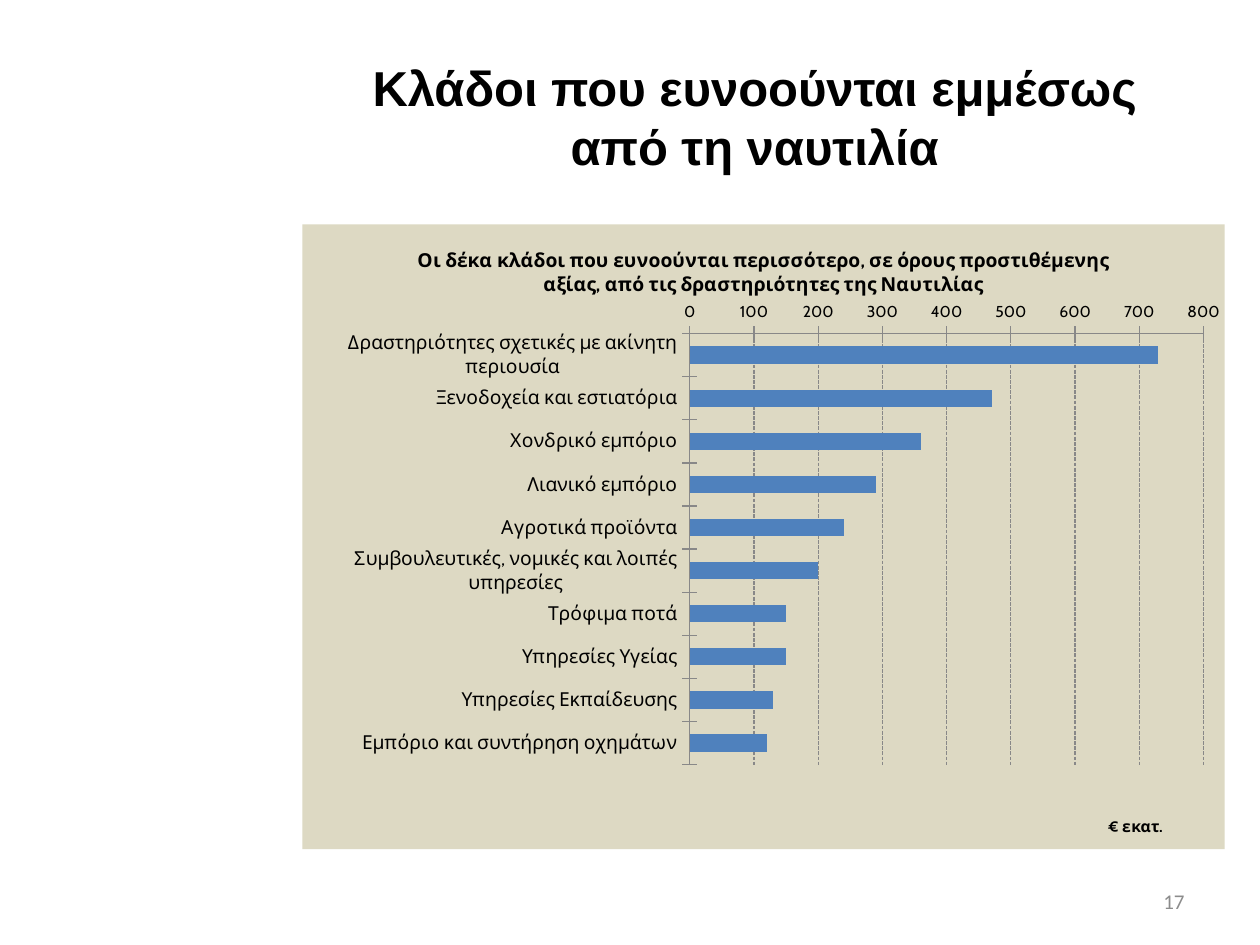
from dataclasses import dataclass

from lxml import etree
from pptx import Presentation
from pptx.chart.data import CategoryChartData
from pptx.dml.color import RGBColor
from pptx.enum.chart import XL_AXIS_CROSSES, XL_CHART_TYPE, XL_TICK_MARK
from pptx.enum.dml import MSO_LINE
from pptx.enum.text import MSO_ANCHOR, PP_ALIGN
from pptx.oxml.ns import qn
from pptx.util import Inches, Pt

BAR = XL_CHART_TYPE.BAR_CLUSTERED
CROSS = XL_TICK_MARK.CROSS
FAR = XL_AXIS_CROSSES.MAXIMUM
DASH = MSO_LINE.SQUARE_DOT
MIDDLE = MSO_ANCHOR.MIDDLE
CENTER, RIGHT = PP_ALIGN.CENTER, PP_ALIGN.RIGHT


@dataclass(frozen=True)
class Theme:
    ink: str = "000000"
    paper: str = "FFFFFF"
    sand: str = "DDD9C3"
    blue: str = "4F81BD"
    line: str = "888888"
    pale: str = "8C8C8C"
    head: int = 28
    note: int = 12
    label: int = 11
    small: int = 9
    head_font: str = "Arial"
    note_font: str = "Calibri"
    chart_font: str = "Cabin"


SECTORS = {
    "Δραστηριότητες σχετικές με ακίνητη περιουσία": 730,
    "Ξενοδοχεία και εστιατόρια": 470,
    "Χονδρικό εμπόριο": 360,
    "Λιανικό εμπόριο": 290,
    "Αγροτικά προϊόντα": 240,
    "Συμβουλευτικές, νομικές και λοιπές υπηρεσίες": 200,
    "Τρόφιμα ποτά": 150,
    "Υπηρεσίες Υγείας": 150,
    "Υπηρεσίες Εκπαίδευσης": 130,
    "Εμπόριο και συντήρηση οχημάτων": 120,
}


def paint(fill, color):
    fill.solid()
    fill.fore_color.rgb = RGBColor.from_string(color)


def layout(host, index, **parts):
    """Give a chart part a manual layout, in fractions of the chart."""
    for old in host.findall(qn("c:layout")):
        host.remove(old)
    node = etree.Element(qn("c:layout"))
    host.insert(index, node)
    manual = etree.SubElement(node, qn("c:manualLayout"))
    for name, value in parts.items():
        etree.SubElement(manual, qn(f"c:{name}")).set("val", str(value))


class Deck:
    def __init__(self, theme):
        self.theme = theme
        self.prs = Presentation()
        self.prs.slide_width, self.prs.slide_height = Inches(10), Inches(7.5)
        self.slide = self.prs.slides.add_slide(self.prs.slide_layouts[6])

    def style(self, font, size, name, color, bold=False):
        font.size, font.name, font.bold = Pt(size), name, bold
        font.color.rgb = RGBColor.from_string(color)

    def text(self, box, words, align, size, name, color, bold=False):
        shape = self.slide.shapes.add_textbox(*map(Inches, box))
        frame = shape.text_frame
        frame.word_wrap, frame.vertical_anchor = True, MIDDLE
        para = frame.paragraphs[0]
        para.alignment = align
        run = para.add_run()
        run.text = words
        self.style(run.font, size, name, color, bold)
        return shape

    def caption(self, frame, words, size):
        run = frame.paragraphs[0].add_run()
        run.text = words
        self.style(run.font, size, self.theme.chart_font, self.theme.ink, True)

    def axis(self, axis, size):
        axis.major_tick_mark = CROSS
        axis.format.line.width = Pt(0.75)
        paint(axis.format.line.fill, self.theme.line)
        self.style(axis.tick_labels.font, size, self.theme.chart_font, self.theme.ink)

    def bars(self, box, title, unit, values):
        theme = self.theme
        data = CategoryChartData()
        data.categories = list(values)
        data.add_series("Series 1", list(values.values()))
        chart = self.slide.shapes.add_chart(BAR, *map(Inches, box), data).chart
        chart.has_legend = False
        self.style(chart.font, theme.small, theme.chart_font, theme.ink)

        # Titles
        chart.has_title = True
        self.caption(chart.chart_title.text_frame, title, theme.label)
        cats, vals = chart.category_axis, chart.value_axis
        self.caption(vals.axis_title.text_frame, unit, theme.small)
        heading = vals.axis_title._element
        layout(heading, 1, xMode="edge", yMode="edge", x=0.87, y=0.94)

        # Axes: first category on top, value scale at the bottom
        self.axis(cats, theme.label)
        self.axis(vals, theme.small)
        cats.reverse_order, cats.crosses = True, FAR
        vals.minimum_scale, vals.maximum_scale, vals.major_unit = 0, 800, 100
        vals.has_major_gridlines = True
        grid = vals.major_gridlines.format.line
        paint(grid.fill, theme.line)
        grid.width, grid.dash_style = Pt(0.75), DASH

        # Bars
        plot = chart.plots[0]
        plot.gap_width, plot.vary_by_categories = 150, False
        paint(plot.series[0].format.fill, theme.blue)

        # Plot area and background
        space = chart._chartSpace
        area = space.find(f".//{qn('c:plotArea')}")
        layout(area, 0, layoutTarget="inner", xMode="edge", yMode="edge",
               x=0.42, y=0.175, w=0.557, h=0.69)
        props = etree.Element(qn("c:spPr"))
        solid = etree.SubElement(props, qn("a:solidFill"))
        etree.SubElement(solid, qn("a:srgbClr")).set("val", theme.sand)
        etree.SubElement(etree.SubElement(props, qn("a:ln")), qn("a:noFill"))
        space.find(qn("c:chart")).addnext(props)


def main():
    theme = Theme()
    deck = Deck(theme)

    # Heading
    head = deck.text((2.48, 0.3, 7.02, 1.25),
                     "Κλάδοι που ευνοούνται εμμέσως από τη ναυτιλία",
                     CENTER, theme.head, theme.head_font, theme.ink, True)
    paint(head.fill, theme.paper)

    # Page number
    deck.text((7.17, 6.95, 2.33, 0.4), "17", RIGHT,
              theme.note, theme.note_font, theme.pale)

    # Chart of sectors
    deck.bars((2.4, 1.78, 7.32, 4.96),
              "Οι δέκα κλάδοι που ευνοούνται περισσότερο, σε όρους προστιθέμενης "
              "αξίας, από τις δραστηριότητες της Ναυτιλίας",
              "€ εκατ.", SECTORS)

    deck.prs.save("out.pptx")


if __name__ == "__main__":
    main()
